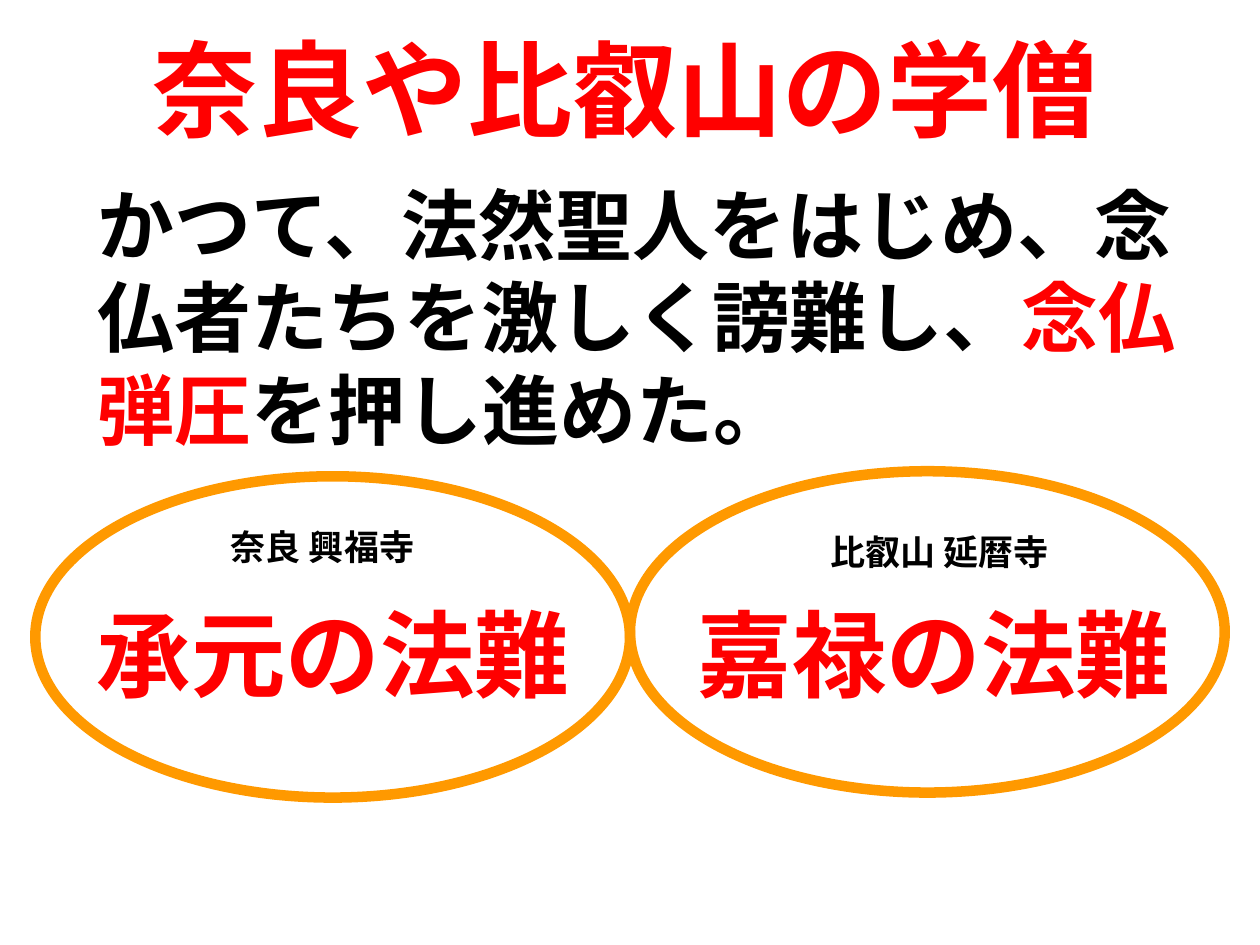
from lxml.etree import SubElement
from pptx import Presentation
from pptx.dml.color import RGBColor
from pptx.enum.lang import MSO_LANGUAGE_ID
from pptx.enum.shapes import MSO_SHAPE
from pptx.enum.text import MSO_ANCHOR, MSO_AUTO_SIZE, PP_ALIGN
from pptx.oxml.ns import qn
from pptx.util import Inches, Pt

RED = RGBColor(0xFF, 0x00, 0x00)
BLACK = RGBColor(0x00, 0x00, 0x00)
ORANGE = RGBColor(0xFF, 0x99, 0x00)
LATIN = "Arial"
JAPANESE = "Noto Sans CJK JP"


def add_span(para, text, size=20, color=BLACK, font=JAPANESE):
    """Add one bold run of Japanese text."""
    span = para.add_run()
    span.text = text
    span.font.name = font
    span.font.size = Pt(size)
    span.font.bold = True
    span.font.color.rgb = color
    span.font.language_id = MSO_LANGUAGE_ID.JAPANESE
    SubElement(span.font._element, qn("a:ea"), typeface=JAPANESE)


class SlideBuilder:
    def __init__(self, page):
        self.page = page

    def place(self, shape, left, top, width, height):
        shape.left, shape.top = Inches(left), Inches(top)
        shape.width, shape.height = Inches(width), Inches(height)

    def title(self, text, *area):
        box = self.page.shapes.title
        self.place(box, *area)
        frame = box.text_frame
        frame.auto_size = MSO_AUTO_SIZE.NONE
        frame.vertical_anchor = MSO_ANCHOR.MIDDLE
        para = frame.paragraphs[0]
        para.alignment = PP_ALIGN.CENTER
        add_span(para, text, size=60, color=RED, font=LATIN)

    def body(self, spans, *area):
        box = self.page.placeholders[1]
        self.place(box, *area)
        box.text_frame.auto_size = MSO_AUTO_SIZE.NONE
        para = box.text_frame.paragraphs[0]
        properties = para._p.get_or_add_pPr()
        properties.set("marL", "0")
        properties.set("indent", "0")
        SubElement(properties, qn("a:buNone"))
        para.space_before = Pt(0)
        for text, color in spans:
            add_span(para, text, size=44, color=color, font=LATIN)

    def label(self, text, *area, align=PP_ALIGN.LEFT, wrap=True, **style):
        box = self.page.shapes.add_textbox(*map(Inches, area))
        box.text_frame.word_wrap = wrap
        para = box.text_frame.paragraphs[0]
        para.alignment = align
        add_span(para, text, **style)

    def ring(self, *area):
        oval = self.page.shapes.add_shape(MSO_SHAPE.OVAL, *map(Inches, area))
        oval.shadow.inherit = False
        oval.fill.background()
        oval.line.color.rgb = ORANGE
        oval.line.width = Pt(6)


def main():
    deck = Presentation()
    deck.slide_width, deck.slide_height = Inches(10), Inches(7.5)
    builder = SlideBuilder(deck.slides.add_slide(deck.slide_layouts[1]))

    # Title and main statement
    builder.title("奈良や比叡山の学僧", 0.46, 0.07, 9, 1.25)
    builder.body([
        ("かつて、法然聖人をはじめ、念仏者たちを激しく謗難し、", BLACK),
        ("念仏弾圧", RED),
        ("を押し進めた。", BLACK),
    ], 0.67, 1.36, 8.86, 2.6)

    # Temples
    for temple, left, top, width in [("奈良 興福寺", 1.69, 4.12, 1.74),
                                     ("比叡山 延暦寺", 6.43, 4.16, 2.05)]:
        builder.label(temple, left, top, width, 0.44,
                      align=PP_ALIGN.CENTER, wrap=False)

    # Persecutions
    for event, left in [("承元の法難", 0.67), ("嘉禄の法難", 5.44)]:
        builder.label(event, left, 4.68, 4.02, 1.01, size=54, color=RED)

    # Rings around each pair
    for left, top in [(0.28, 3.78), (5, 3.74)]:
        builder.ring(left, top, 4.72, 2.55)

    deck.save("out.pptx")


if __name__ == "__main__":
    main()
